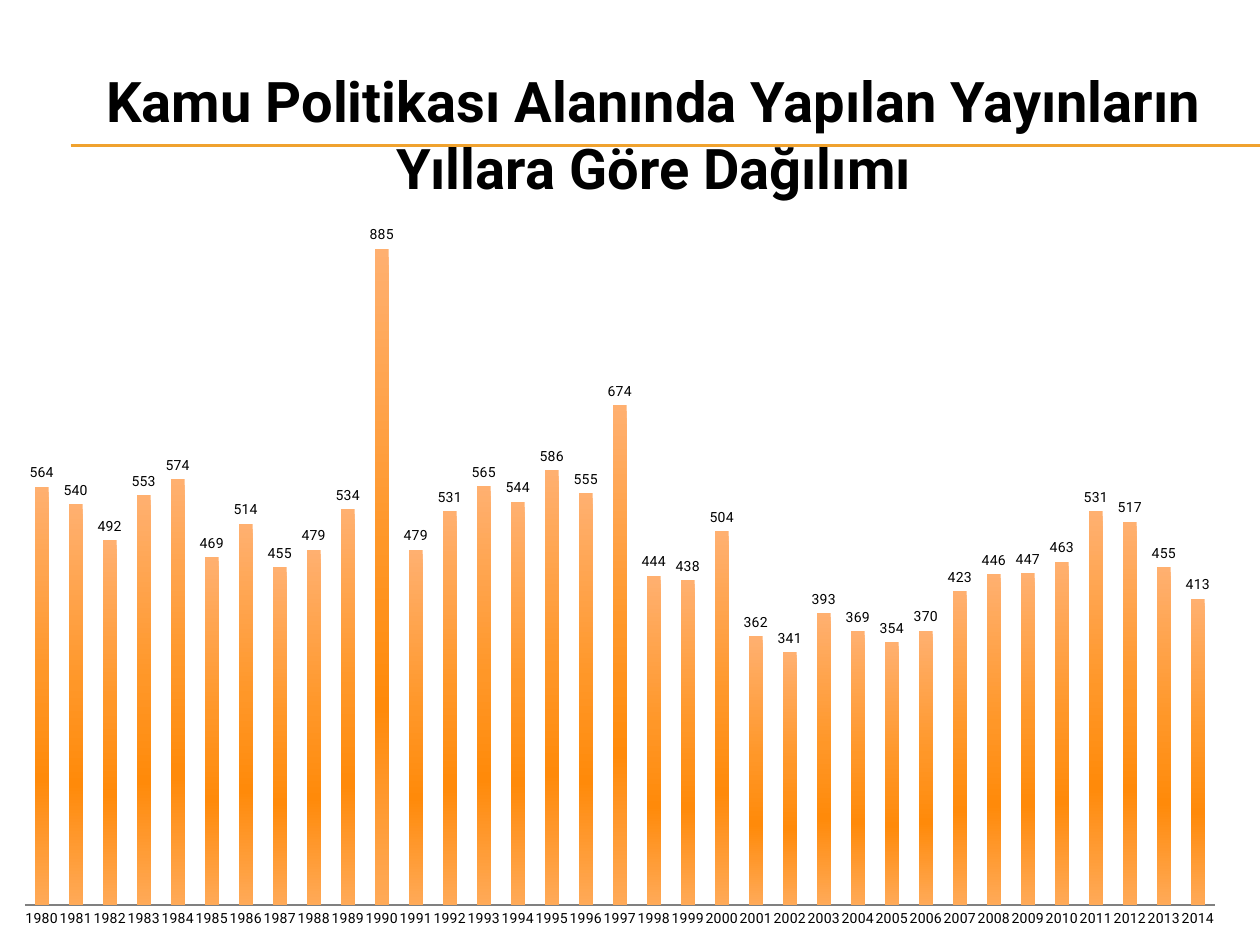
from copy import deepcopy

from pptx import Presentation
from pptx.chart.data import CategoryChartData
from pptx.dml.color import RGBColor
from pptx.enum.chart import XL_CHART_TYPE, XL_LABEL_POSITION, XL_TICK_MARK
from pptx.enum.shapes import MSO_CONNECTOR
from pptx.enum.text import MSO_ANCHOR, PP_ALIGN
from pptx.oxml.ns import qn
from pptx.util import Inches, Pt
from lxml.etree import SubElement


def color(value):
    return RGBColor.from_string(value)


def format_font(font, size, bold=False):
    font.name = "Roboto"
    font.size = Pt(size)
    font.bold = bold
    font.color.rgb = color("000000")


presentation = Presentation()
presentation.slide_width = Inches(10)
presentation.slide_height = Inches(7.5)
slide = presentation.slides.add_slide(presentation.slide_layouts[5])

for y in (1.15, 1.16):
    rule = slide.shapes.add_connector(
        MSO_CONNECTOR.STRAIGHT, Inches(0.56), Inches(y), Inches(10), Inches(y))
    rule.line.color.rgb = color("F0A22E")
    rule.line.width = Pt(0.75)
    SubElement(rule._element.spPr, qn("a:effectLst"))

publications = [
    564, 540, 492, 553, 574, 469, 514, 455, 479, 534, 885, 479,
    531, 565, 544, 586, 555, 674, 444, 438, 504, 362, 341, 393,
    369, 354, 370, 423, 446, 447, 463, 531, 517, 455, 413,
]
chart_data = CategoryChartData()
chart_data.categories = [str(1980 + index) for index in range(len(publications))]
chart_data.add_series("Series 1", publications)
chart = slide.shapes.add_chart(
    XL_CHART_TYPE.COLUMN_CLUSTERED,
    Inches(0), Inches(1.17), Inches(9.84), Inches(6.33), chart_data).chart
format_font(chart.font, 10)
chart.has_title = False
chart.has_legend = False

category_axis = chart.category_axis
category_axis.major_tick_mark = XL_TICK_MARK.NONE
category_axis.format.line.color.rgb = color("808080")
format_font(category_axis.tick_labels.font, 8)
value_axis = chart.value_axis
value_axis.visible = False
value_axis.has_major_gridlines = False
value_axis.minimum_scale = 0
value_axis.maximum_scale = 1000

plot = chart.plots[0]
plot.gap_width = 150
plot.overlap = -25
plot.vary_by_categories = False
plot.has_data_labels = True
labels = plot.data_labels
labels.show_value = True
labels.position = XL_LABEL_POSITION.OUTSIDE_END
format_font(labels.font, 8)

series = plot.series[0]
series.invert_if_negative = False
fill = series.format.fill
fill.gradient()
fill.gradient_angle = 270
stop_list = series._element.find(".//" + qn("a:gsLst"))
for _ in range(2):
    stop_list.append(deepcopy(stop_list[0]))
gradient = [(0, "FFB070"), (0.45, "FF9728"), (0.7, "FF8A0A"), (1, "FFAA58")]
for stop, (position, value) in zip(fill.gradient_stops, gradient):
    stop.position = position
    stop.color.rgb = color(value)

plot_area = chart._chartSpace.chart.plotArea
layout = plot_area.find(qn("c:layout"))
if layout is None:
    layout = SubElement(plot_area, qn("c:layout"))
    plot_area.insert(0, layout)
manual_layout = SubElement(layout, qn("c:manualLayout"))
for name, value in (("layoutTarget", "inner"), ("xMode", "edge"), ("yMode", "edge"),
                    ("x", "0.02"), ("y", "0.02"), ("w", "0.96"), ("h", "0.93")):
    SubElement(manual_layout, qn("c:" + name)).set("val", value)

title = slide.shapes.title
title.left, title.top = Inches(0.7), Inches(0.47)
title.width, title.height = Inches(8.98), Inches(1.18)
title.text_frame.text = "Kamu Politikası Alanında Yapılan Yayınların Yıllara Göre Dağılımı"
title.text_frame.word_wrap = True
title.text_frame.vertical_anchor = MSO_ANCHOR.MIDDLE
paragraph = title.text_frame.paragraphs[0]
paragraph.alignment = PP_ALIGN.CENTER
format_font(paragraph.font, 32, bold=True)
slide.shapes._spTree.append(title._element)

presentation.save("out.pptx")
